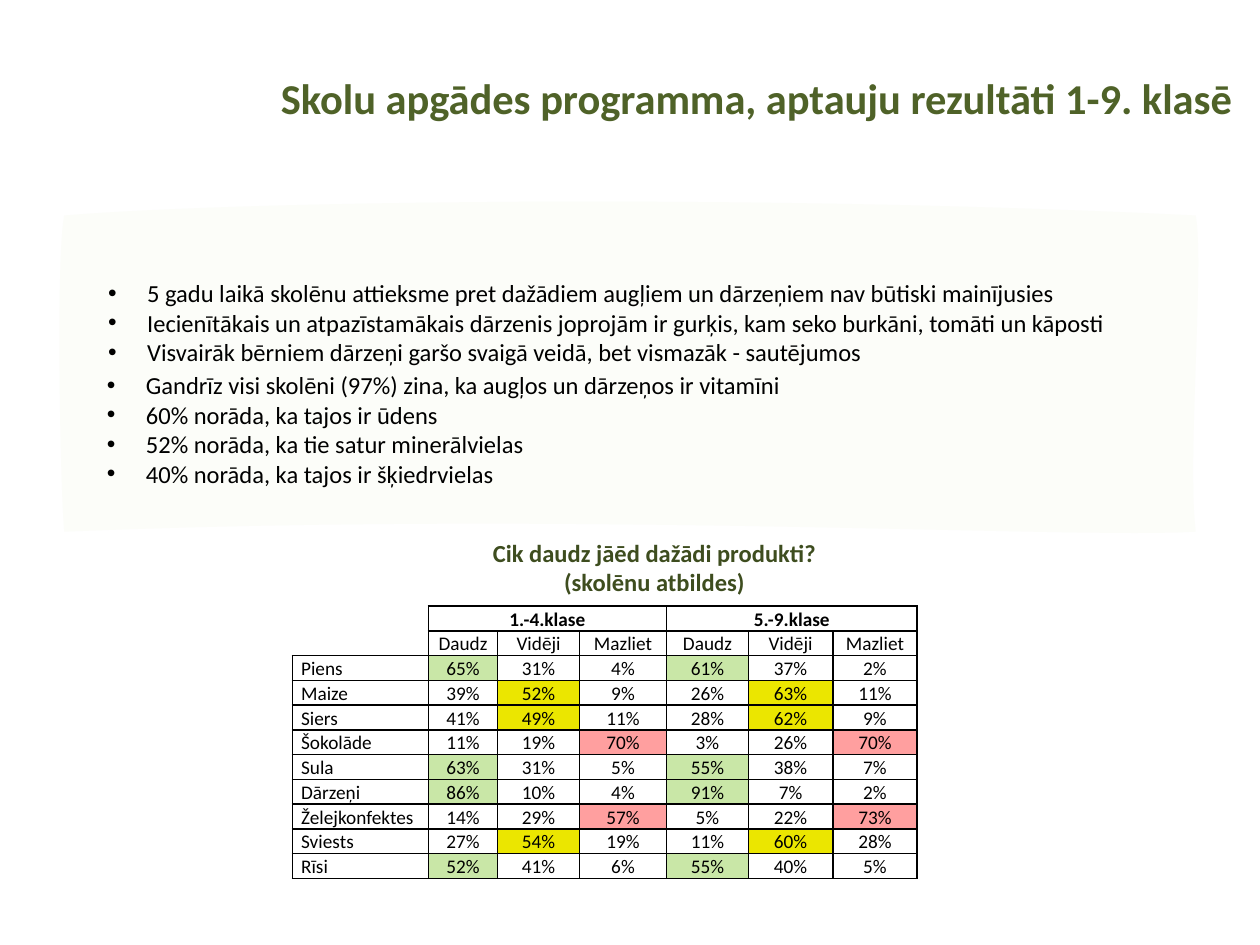
import lxml.etree
import pptx
import pptx.dml.color
import pptx.enum.text
import pptx.oxml.ns
import pptx.util

Inches = pptx.util.Inches
Pt = pptx.util.Pt
RGBColor = pptx.dml.color.RGBColor
ALIGN = pptx.enum.text.PP_ALIGN
qn = pptx.oxml.ns.qn

BLACK = RGBColor(0x00, 0x00, 0x00)
TITLE_GREEN = RGBColor(0x4F, 0x62, 0x28)
CAPTION_GREEN = RGBColor(0x3E, 0x4D, 0x1F)
PANEL_FILL = RGBColor(0xFC, 0xFD, 0xF9)
MUCH_GREEN = RGBColor(0xC9, 0xE7, 0xA7)
MEDIUM_YELLOW = RGBColor(0xEB, 0xE6, 0x00)
LITTLE_RED = RGBColor(0xFF, 0x9F, 0x9F)

FONT = "Calibri"
ANSWERS = [("Daudz", MUCH_GREEN), ("Vidēji", MEDIUM_YELLOW), ("Mazliet", LITTLE_RED)]
GRADES = ["1.-4.klase", "5.-9.klase"]
COLUMN_WIDTHS = [1.08, 0.55, 0.65, 0.69, 0.65, 0.67, 0.67]
ROW_HEIGHT = 0.19
PRODUCTS = [
    ("Piens", (65, 31, 4), (61, 37, 2)),
    ("Maize", (39, 52, 9), (26, 63, 11)),
    ("Siers", (41, 49, 11), (28, 62, 9)),
    ("Šokolāde", (11, 19, 70), (3, 26, 70)),
    ("Sula", (63, 31, 5), (55, 38, 7)),
    ("Dārzeņi", (86, 10, 4), (91, 7, 2)),
    ("Želejkonfektes", (14, 29, 57), (5, 22, 73)),
    ("Sviests", (27, 54, 19), (11, 60, 28)),
    ("Rīsi", (52, 41, 6), (55, 40, 5)),
]
ATTITUDES = [
    "5 gadu laikā skolēnu attieksme pret dažādiem augļiem un dārzeņiem nav būtiski mainījusies",
    "Iecienītākais un atpazīstamākais dārzenis joprojām ir gurķis, kam seko burkāni, tomāti un kāposti",
    "Visvairāk bērniem dārzeņi garšo svaigā veidā, bet vismazāk - sautējumos",
]
KNOWLEDGE = [
    "Gandrīz visi skolēni (97%) zina, ka augļos un dārzeņos ir vitamīni",
    "60% norāda, ka tajos ir ūdens",
    "52% norāda, ka tie satur minerālvielas",
    "40% norāda, ka tajos ir šķiedrvielas",
]
PANEL_START = (0.51, 1.71)
PANEL_CURVES = [
    ((1.81, 1.6), (5.84, 1.53), (9.49, 1.71)),
    ((9.56, 2.09), (9.42, 3.65), (9.49, 4.22)),
    ((8.55, 4.28), (4.53, 4.05), (0.51, 4.22)),
    ((0.48, 3.92), (0.44, 2.06), (0.51, 1.71)),
]


def add_text(para, text, size, color, bold=False, align=ALIGN.LEFT):
    para.alignment = align
    span = para.add_run()
    span.text = text
    span.font.name = FONT
    span.font.size = Pt(size)
    span.font.bold = bold
    span.font.color.rgb = color


def add_title(page, left, top, width, height):
    title = page.shapes.title
    title.left, title.top = Inches(left), Inches(top)
    title.width, title.height = Inches(width), Inches(height)
    frame = title.text_frame
    frame.auto_size = pptx.enum.text.MSO_AUTO_SIZE.NONE
    frame.vertical_anchor = pptx.enum.text.MSO_ANCHOR.TOP
    add_text(frame.paragraphs[0], "Skolu apgādes programma, aptauju rezultāti 1-9. klasē",
             24.3, TITLE_GREEN, bold=True)


def curve_points(start, control_1, control_2, end, steps=24):
    for step in range(1, steps + 1):
        t = step / steps
        weights = ((1 - t) ** 3, 3 * t * (1 - t) ** 2, 3 * t ** 2 * (1 - t), t ** 3)
        corners = (start, control_1, control_2, end)
        yield tuple(Inches(sum(w * corner[axis] for w, corner in zip(weights, corners)))
                    for axis in (0, 1))


def add_panel(page):
    builder = page.shapes.build_freeform(Inches(PANEL_START[0]), Inches(PANEL_START[1]))
    start = PANEL_START
    for curve in PANEL_CURVES:
        builder.add_line_segments(list(curve_points(start, *curve)), close=False)
        start = curve[-1]
    builder.add_line_segments([], close=True)
    panel = builder.convert_to_shape()
    panel.shadow.inherit = False
    panel.fill.solid()
    panel.fill.fore_color.rgb = PANEL_FILL
    panel.line.fill.background()


def add_lines(page, left, top, width, height, lines, color, bold=False,
              align=ALIGN.LEFT, bulleted=False):
    box = page.shapes.add_textbox(Inches(left), Inches(top), Inches(width), Inches(height))
    frame = box.text_frame
    frame.word_wrap = True
    for index, line in enumerate(lines):
        para = frame.add_paragraph() if index else frame.paragraphs[0]
        if bulleted:
            properties = para._p.get_or_add_pPr()
            properties.set("marL", str(Inches(0.31)))
            properties.set("indent", str(Inches(-0.31)))
            lxml.etree.SubElement(properties, qn("a:buFont"), typeface="Arial")
            lxml.etree.SubElement(properties, qn("a:buChar"), char="•")
        add_text(para, line, 14, color, bold, align)


def set_borders(cell, sides):
    properties = cell._tc.get_or_add_tcPr()
    for side in "LRTB":
        line = lxml.etree.SubElement(properties, qn("a:ln" + side), w=str(Pt(1)))
        if side in sides:
            fill = lxml.etree.SubElement(line, qn("a:solidFill"))
            lxml.etree.SubElement(fill, qn("a:srgbClr"), val=str(BLACK))
        else:
            lxml.etree.SubElement(line, qn("a:noFill"))


def fill_cell(cell, text, align=ALIGN.CENTER, bold=False, color=None):
    if color is None:
        cell.fill.background()
    else:
        cell.fill.solid()
        cell.fill.fore_color.rgb = color
    cell.vertical_anchor = pptx.enum.text.MSO_ANCHOR.BOTTOM
    cell.margin_left = cell.margin_right = Inches(0.07)
    cell.margin_top = cell.margin_bottom = 0
    para = cell.text_frame.paragraphs[0]
    para.line_spacing = 1.07
    if text:
        add_text(para, text, 11, BLACK, bold, align)
    else:
        para.font.size = Pt(11)


def add_product_table(page, left, top):
    row_count = len(PRODUCTS) + 2
    table = page.shapes.add_table(
        row_count, len(COLUMN_WIDTHS), Inches(left), Inches(top),
        Inches(sum(COLUMN_WIDTHS)), Inches(ROW_HEIGHT * row_count)).table
    table.first_row = table.horz_banding = False
    for column, width in zip(table.columns, COLUMN_WIDTHS):
        column.width = Inches(width)
    for row_index, row in enumerate(table.rows):
        row.height = Inches(ROW_HEIGHT)
        for column_index, cell in enumerate(row.cells):
            corner_sides = {0: "R", 1: "RB"}
            set_borders(cell, "LRTB" if column_index else corner_sides.get(row_index, "LRTB"))

    for row_index in (0, 1):
        fill_cell(table.cell(row_index, 0), "")
    for group, grade in enumerate(GRADES):
        first = 1 + group * len(ANSWERS)
        table.cell(0, first).merge(table.cell(0, first + len(ANSWERS) - 1))
        fill_cell(table.cell(0, first), grade, bold=True)
        for offset, (answer, color) in enumerate(ANSWERS):
            fill_cell(table.cell(1, first + offset), answer)

    for row_index, (product, *groups) in enumerate(PRODUCTS, start=2):
        fill_cell(table.cell(row_index, 0), product, ALIGN.LEFT)
        for group, shares in enumerate(groups):
            for offset, share in enumerate(shares):
                color = ANSWERS[offset][1] if share == max(shares) else None
                cell = table.cell(row_index, 1 + group * len(ANSWERS) + offset)
                fill_cell(cell, f"{share}%", color=color)


def main():
    deck = pptx.Presentation()
    deck.slide_width, deck.slide_height = Inches(10), Inches(7.5)
    page = deck.slides.add_slide(deck.slide_layouts.get_by_name("Title Only"))
    add_panel(page)
    add_title(page, 2.13, 0.52, 7.91, 0.78)
    add_lines(page, 0.76, 2.16, 9.24, 0.81, ATTITUDES, BLACK, bulleted=True)
    add_lines(page, 2.83, 4.22, 4.73, 0.57,
              ["Cik daudz jāēd dažādi produkti?", "(skolēnu atbildes)"],
              CAPTION_GREEN, bold=True, align=ALIGN.CENTER)
    add_lines(page, 0.75, 2.89, 9.25, 1.04, KNOWLEDGE, BLACK, bulleted=True)
    add_product_table(page, 2.32, 4.81)
    deck.save("out.pptx")


if __name__ == "__main__":
    main()
